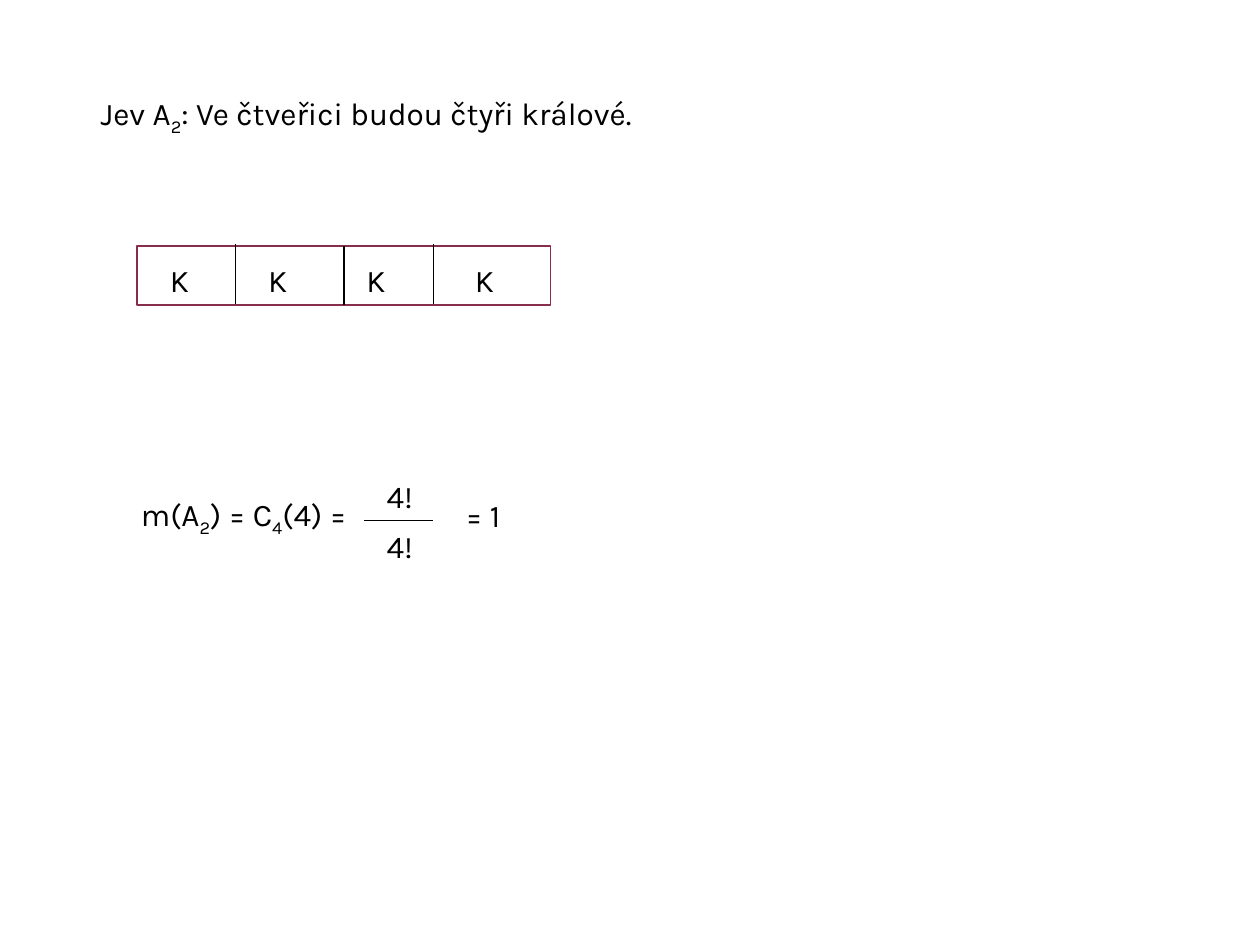
from lxml import etree
from pptx import Presentation
from pptx.dml.color import RGBColor
from pptx.enum.shapes import MSO_CONNECTOR, MSO_SHAPE
from pptx.enum.text import MSO_AUTO_SIZE
from pptx.oxml.ns import qn
from pptx.util import Inches, Pt

STRAIGHT = MSO_CONNECTOR.STRAIGHT
RECTANGLE = MSO_SHAPE.RECTANGLE
FIT_SHAPE = MSO_AUTO_SIZE.SHAPE_TO_FIT_TEXT

FONT, TEXT_SIZE, TEXT_HEIGHT = "Karla", 18, 0.4
BLACK, WHITE, WINE = "000000", "FFFFFF", "882D4D"

# Each text is a list of pieces; every second piece is a subscript.
TITLE = ["Jev A", "2", ": Ve čtveřici budou čtyři králové."]
FORMULA = ["m(A", "2", ") = C", "4", "(4) ="]
RESULT = ["= 1"]
FRACTION = [("4!", 3.74), ("4!", 4.13)]  # text, top
FRACTION_LEFT, FRACTION_WIDTH = 2.97, 0.43
BAR_LEFT, BAR_RIGHT, BAR_TOP = 2.89, 3.44, 4.13

CARDS_LEFT, CARDS_TOP, CARDS_WIDTH, CARDS_HEIGHT = 1.09, 1.95, 3.28, 0.47
CARDS = [("K", 1.25), ("K", 2.03), ("K", 2.81), ("K", 3.67)]  # text, left
DIVIDERS = [(1.87, 1.94), (2.73, 1.95), (3.44, 1.94)]  # left, top


def color(value):
    return RGBColor.from_string(value)


def add_text(shapes, pieces, left, top, width, wrap=False):
    box = shapes.add_textbox(*map(Inches, (left, top, width, TEXT_HEIGHT)))
    frame = box.text_frame
    frame.word_wrap = wrap
    frame.auto_size = FIT_SHAPE
    for index, piece in enumerate(pieces):
        span = frame.paragraphs[0].add_run()
        span.text = piece
        span.font.name = FONT
        span.font.size = Pt(TEXT_SIZE)
        span.font.color.rgb = color(BLACK)
        if index % 2:
            span.font._element.set("baseline", "-25000")


def add_line(shapes, start_x, start_y, end_x, end_y):
    ends = map(Inches, (start_x, start_y, end_x, end_y))
    line = shapes.add_connector(STRAIGHT, *ends)
    line.line.color.rgb = color(BLACK)
    line.line.width = Pt(0.9)
    etree.SubElement(line._element.spPr, qn("a:effectLst"))


def add_cards(shapes):
    frame = shapes.add_shape(RECTANGLE, *map(
        Inches, (CARDS_LEFT, CARDS_TOP, CARDS_WIDTH, CARDS_HEIGHT)))
    frame.shadow.inherit = False
    frame.fill.solid()
    frame.fill.fore_color.rgb = color(WHITE)
    frame.line.color.rgb = color(WINE)
    frame.line.width = Pt(1)
    for left, top in DIVIDERS:
        add_line(shapes, left, top, left, top + CARDS_HEIGHT)
    for card, left in CARDS:
        add_text(shapes, [card], left, 2.02, 0.35)


def add_formula(shapes):
    add_text(shapes, FORMULA, 1.02, 3.88, 2.74, wrap=True)
    add_line(shapes, BAR_LEFT, BAR_TOP, BAR_RIGHT, BAR_TOP)
    for number, top in FRACTION:
        add_text(shapes, [number], FRACTION_LEFT, top, FRACTION_WIDTH)
    add_text(shapes, RESULT, 3.6, 3.89, 0.54)


def main():
    deck = Presentation()
    deck.slide_width, deck.slide_height = Inches(10), Inches(7.5)
    page = deck.slides.add_slide(deck.slide_layouts[6])
    add_text(page.shapes, TITLE, 0.7, 0.7, 4.61)
    add_cards(page.shapes.add_group_shape().shapes)
    add_formula(page.shapes.add_group_shape().shapes)
    deck.save("out.pptx")


if __name__ == "__main__":
    main()
